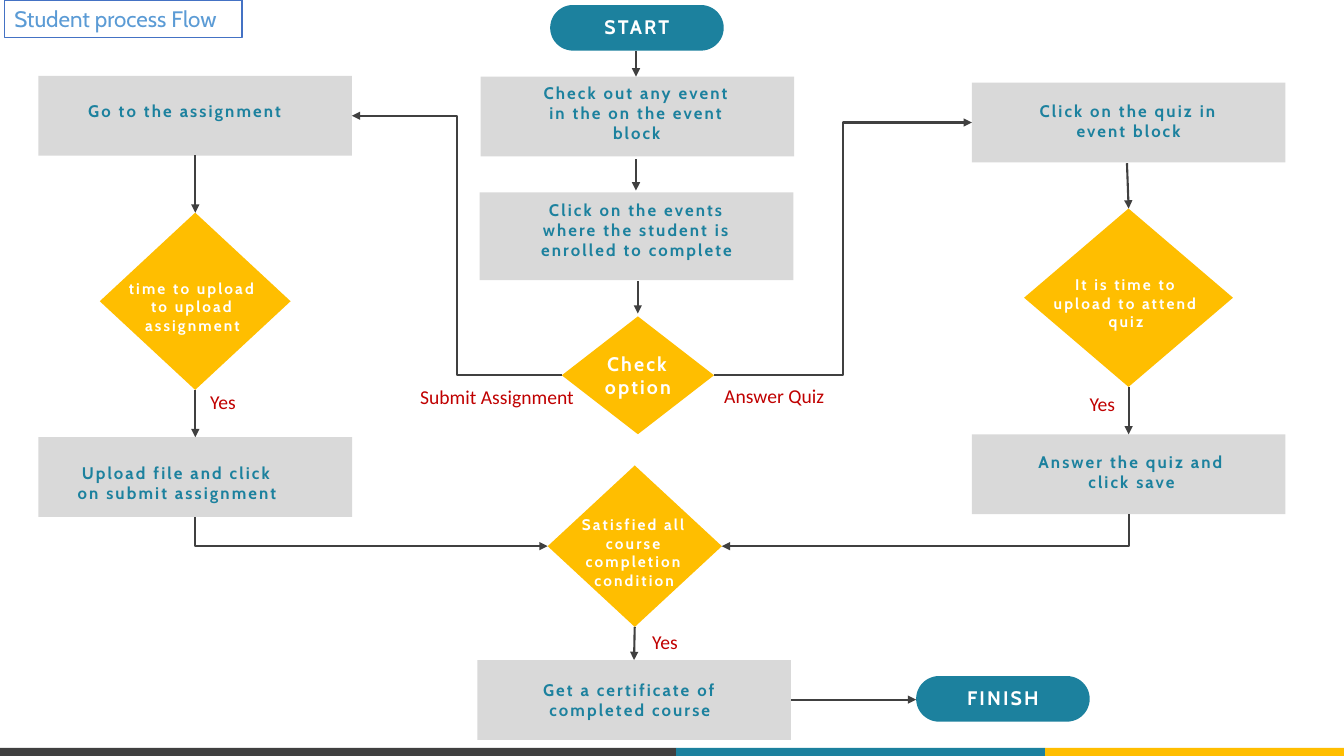
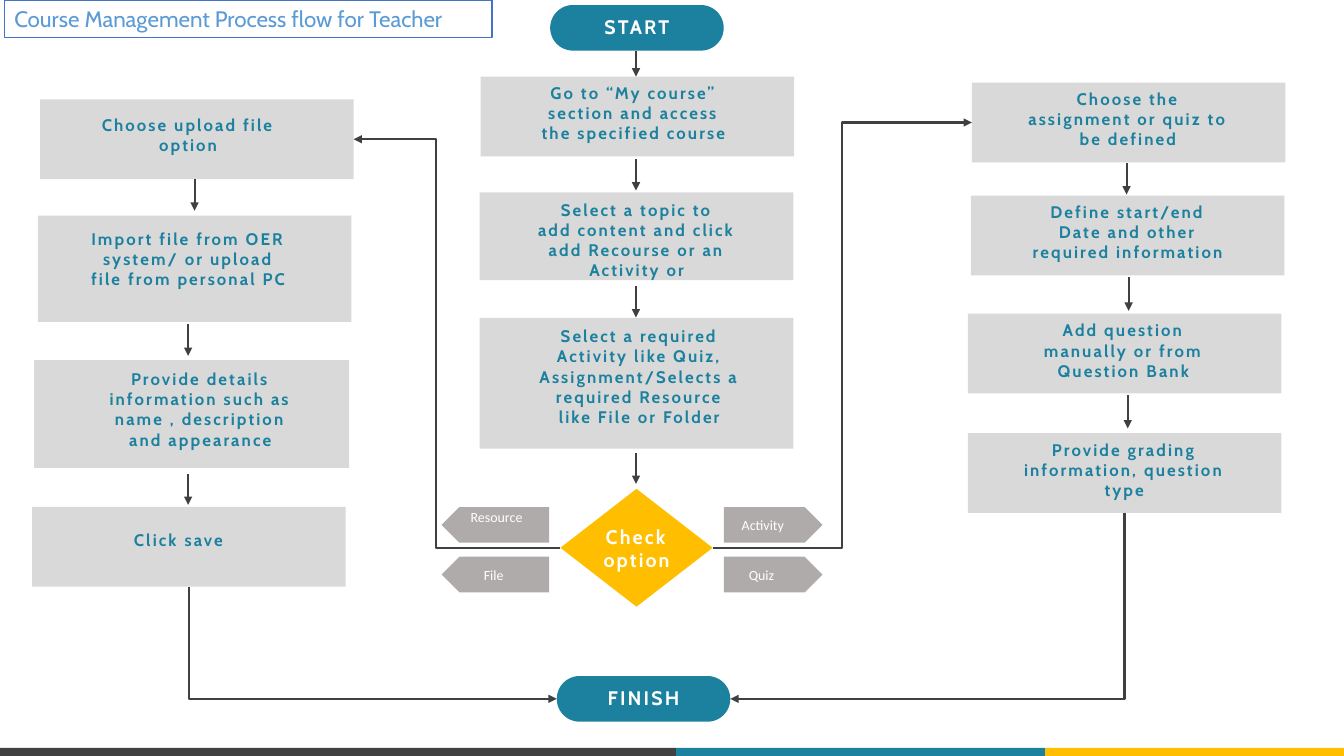
"""Build two flowchart slides: the student process and the teacher's course management."""
from dataclasses import dataclass

from lxml import etree
from pptx import Presentation
from pptx.dml.color import RGBColor
from pptx.enum import shapes, text
from pptx.oxml.ns import qn
from pptx.shapes.autoshape import Shape
from pptx.shapes.connector import Connector
from pptx.slide import Slide
from pptx.util import Pt

TEAL, AMBER, DARK, PALE, GREY = "1C819E", "FFBE00", "404040", "D9D9D9", "AFABAB"
WHITE, RED, SKY, BLUE = "FFFFFF", "C00000", "5B9BD5", "4472C4"
HEADING, PLAIN = "Cabin", "Calibri"
GEOMETRY = shapes.MSO_SHAPE
TOP, LEFT, BOTTOM, RIGHT = range(4)
NO_INSETS = {"margin_left": 0, "margin_top": 0, "margin_right": 0, "margin_bottom": 0}


@dataclass(frozen=True)
class Style:
    """Look of one kind of flowchart node."""
    outline: int
    fill: str
    ink: str
    size: int


STYLES = {
    "end": Style(GEOMETRY.ROUNDED_RECTANGLE, TEAL, WHITE, 14),
    "step": Style(GEOMETRY.RECTANGLE, PALE, TEAL, 12),
    "choice": Style(GEOMETRY.DIAMOND, AMBER, WHITE, 11),
    "option": Style(GEOMETRY.DIAMOND, AMBER, WHITE, 14),
}


@dataclass(frozen=True)
class Node:
    """Flowchart node with its wording and the place of that wording."""
    key: str
    words: str
    left: float
    top: float
    words_left: float
    words_top: float
    height: float = 57
    width: float = 224
    words_width: float = 145
    style: str = "step"


@dataclass(frozen=True)
class Arrow:
    """Straight arrow between two points."""
    x1: float
    y1: float
    x2: float
    y2: float


@dataclass(frozen=True)
class Link:
    """Elbow arrow between two nodes; a corner has no bend and turns once."""
    source: str
    source_side: int
    target: str
    target_side: int
    bend: float = 0


@dataclass(frozen=True)
class Label:
    """Free red caption beside an arrow."""
    words: str
    left: float
    top: float


@dataclass(frozen=True)
class Tag:
    """Grey pointer naming what an option leads to."""
    words: str
    outline: int
    left: float
    top: float
    width: float
    right_inset: float
    lift: float = 0


@dataclass(frozen=True)
class Flow:
    """Everything on one slide."""
    title: str
    title_width: float
    nodes: list[Node]
    arrows: list[Arrow]
    links: list[Link]
    labels: list[Label]
    tags: list[Tag]


def end_node(key: str, words: str, left: float, top: float) -> Node:
    """Describe a rounded start or finish node."""
    return Node(key, words, left, top, left + 34, top + 7, 32.6, 124, 56, "end")


START = end_node("start", "START", 393, 3.6)
START_ARROW = Arrow(454.3, 36.7, 454.3, 54.7)
SECOND_ARROW = Arrow(454.3, 113.8, 454.3, 136.1)

STUDENT = Flow(
    "Student process Flow", 170,
    [
        START,
        Node("events", "Check out any event in the on the event block", 343.4, 54.7, 382.3, 59),
        Node("enrolled", "Click on the events where the student is enrolled to complete",
             342.7, 137.5, 382.3, 142.6, 62.6),
        Node("option", "Check option", 401.3, 226, 414, 251.3, 84.2, 108.7, 83.5, "option"),
        Node("quiz", "Click on the quiz in event block", 694.2, 59, 733.7, 72),
        Node("assignment", "Go to the assignment", 27.4, 54.2, 59.5, 72),
        Node("upload", "Upload file and click on submit assignment", 27.5, 312.3, 54, 330.5),
        Node("answer", "Answer the quiz and click save", 694.2, 310.3, 735.8, 322.6),
        Node("upload time", "time to upload to upload assignment",
             71.3, 151.9, 85.7, 199.4, 126.6, 136.3, 103.7, "choice"),
        Node("quiz time", "It is time to upload to attend quiz",
             731.5, 149, 747.4, 196.6, 127.4, 149.2, 113.8, "choice"),
        Node("satisfied", "Satisfied all course completion condition",
             391.2, 332.5, 405.5, 368, 115.3, 124.4, 95, "choice"),
        Node("certificate", "Get a certificate of completed course", 341, 471.5, 377.5, 485.3),
        end_node("finish", "FINISH", 654.4, 482.9),
    ],
    [
        START_ARROW, SECOND_ARROW,
        Arrow(805, 116.6, 806.2, 149),
        Arrow(455.6, 201, 455.6, 224),
        Arrow(139.5, 111, 139.5, 152),
        Arrow(139.5, 278.5, 139.5, 312.3),
        Arrow(806.2, 276.5, 806.2, 310.3),
        Arrow(453.4, 447.8, 452.9, 471.5),
        Arrow(565, 499.7, 654.4, 499.7),
    ],
    [
        Link("option", RIGHT, "quiz", LEFT, 0.5),
        Link("option", LEFT, "assignment", RIGHT, 0.5),
        Link("answer", BOTTOM, "satisfied", RIGHT),
        Link("upload", BOTTOM, "satisfied", LEFT),
    ],
    [
        Label("Submit Assignment", 293, 271.4),
        Label("Answer Quiz", 510.2, 270.4),
        Label("Yes", 143, 275),
        Label("Yes", 771.2, 276.5),
        Label("Yes", 458.8, 446.4),
    ],
    [],
)

TEACHER = Flow(
    "Course Management Process flow for Teacher", 348.5,
    [
        START,
        Node("course", "Go to “My course”|section and access|the specified course",
             343.4, 54.7, 380, 59),
        Node("topic", "Select a topic to|add content and click add Recourse or an Activity or",
             342.7, 137.5, 382.3, 142.6, 62.6),
        Node("activity", "Select a required Activity like Quiz, Assignment/Selects a "
             "required Resource like File or Folder", 342.7, 227, 384.2, 232.9, 93.5),
        Node("option", "Check option", 400.3, 349.2, 413, 374.8, 84.2, 108.7, 83.5, "option"),
        Node("define", "Choose the assignment or quiz to be defined", 694.2, 59, 733.2, 63.5),
        Node("dates", "Define start/end Date and other required information",
             693.5, 139.7, 733, 144),
        Node("question", "Add question manually or from Question Bank",
             691.3, 224, 730, 228.6),
        Node("grading", "Provide grading information, question type",
             691.3, 309.4, 730.5, 314),
        Node("choose", "Choose upload file option", 28.6, 71, 61.9, 82),
        Node("import", "Import file from OER system/ or upload file from personal PC",
             27.1, 154, 62, 163.4, 76),
        Node("details", "Provide details information such as name , description and appearance",
             24.4, 257.3, 70.6, 263.5, 76.9, 225),
        Node("save", "Click save", 22.9, 362.1, 55, 378.5),
        end_node("finish", "FINISH", 397.7, 482.9),
    ],
    [
        START_ARROW, SECOND_ARROW,
        Arrow(454.3, 204.5, 454.3, 226.8),
        Arrow(454.3, 323.3, 454.3, 345.6),
        Arrow(804.7, 116.6, 804.7, 139),
        Arrow(806.2, 198, 806.2, 222),
        Arrow(805.6, 282.2, 805.6, 306),
        Arrow(139, 128.2, 139, 150.5),
        Arrow(134.4, 231.1, 134.4, 254.2),
        Arrow(134.4, 338.4, 134.4, 360.7),
    ],
    [
        Link("option", RIGHT, "define", LEFT, 0.5),
        Link("option", LEFT, "choose", RIGHT, 0.6),
        Link("grading", BOTTOM, "finish", RIGHT),
        Link("save", BOTTOM, "finish", LEFT),
    ],
    [],
    [
        Tag("Activity", GEOMETRY.RIGHT_ARROW, 517, 362.2, 70.5, 2),
        Tag("Quiz", GEOMETRY.RIGHT_ARROW, 517, 397.7, 70.5, 4),
        Tag("Resource", GEOMETRY.LEFT_ARROW, 315.4, 362.2, 76.8, 11, 11),
        Tag("File", GEOMETRY.LEFT_ARROW, 315.4, 397.7, 76.8, 15),
    ],
)


def paint(format_part: object, colour: str) -> None:
    """Set a fill to a solid colour, or a font or line to that colour."""
    if hasattr(format_part, "solid"):
        format_part.solid()
        format_part.fore_color.rgb = RGBColor.from_string(colour)
    else:
        format_part.color.rgb = RGBColor.from_string(colour)


def set_all(target: object, values: dict) -> None:
    """Set every named attribute on the target."""
    for name, value in values.items():
        setattr(target, name, value)


def write(holder: Shape, words: str, colour: str, font: dict, frame: dict,
          align: int = text.PP_ALIGN.CENTER, spacing: float = 0) -> None:
    """Write words in a shape, with a line break at each bar."""
    set_all(holder.text_frame, {"word_wrap": True, **frame})
    paragraph = holder.text_frame.paragraphs[0]
    paragraph.alignment = align
    for number, line in enumerate(words.split("|")):
        if number:
            paragraph.add_line_break()
        run = paragraph.add_run()
        run.text = line
        set_all(run.font, font)
        paint(run.font, colour)
        if spacing:
            run.font._element.set("spc", str(round(spacing * 100)))


def draw_shape(slide: Slide, outline: int, box: tuple, fill: str) -> Shape:
    """Draw a flat preset shape without a border."""
    shape = slide.shapes.add_shape(outline, *map(Pt, box))
    shape.shadow.inherit = False
    paint(shape.fill, fill)
    shape.line.fill.background()
    return shape


def draw_node(slide: Slide, node: Node) -> Shape:
    """Draw a node and its wording, and return the node's shape."""
    style = STYLES[node.style]
    shape = draw_shape(slide, style.outline, (node.left, node.top, node.width, node.height),
                       style.fill)
    if node.style == "end":
        shape.adjustments[0] = 0.5
    words_height = node.top + node.height - node.words_top
    wording = slide.shapes.add_textbox(*map(Pt, (node.words_left, node.words_top,
                                                 node.words_width, words_height)))
    write(wording, node.words, style.ink,
          {"name": HEADING, "size": Pt(style.size), "bold": True}, NO_INSETS, spacing=1.5)
    return shape


def finish_line(line: Connector, arrow_end: str) -> None:
    """Give a connector its colour, width and arrowhead, and no shadow."""
    paint(line.line, DARK)
    line.line.width = Pt(1.5)
    properties = line._element.spPr
    etree.SubElement(properties.get_or_add_ln(), qn(arrow_end)).set("type", "triangle")
    etree.SubElement(properties, qn("a:effectLst"))


def draw_link(slide: Slide, link: Link, drawn: dict[str, Shape]) -> None:
    """Glue an elbow arrow to two nodes; corners run back from their target."""
    ends = [(drawn[link.source], link.source_side), (drawn[link.target], link.target_side)]
    if not link.bend:
        ends.reverse()
    elbow = slide.shapes.add_connector(shapes.MSO_CONNECTOR.ELBOW, Pt(0), Pt(0), Pt(0), Pt(0))
    elbow.begin_connect(*ends[0])
    elbow.end_connect(*ends[1])
    geometry = elbow._element.spPr.find(qn("a:prstGeom"))
    if link.bend:
        guides = geometry.find(qn("a:avLst"))
        if guides is None:
            guides = etree.SubElement(geometry, qn("a:avLst"))
        guide = etree.SubElement(guides, qn("a:gd"))
        guide.set("name", "adj1")
        guide.set("fmla", f"val {round(link.bend * 100000)}")
    else:
        geometry.set("prst", "bentConnector2")
    finish_line(elbow, "a:tailEnd" if link.bend else "a:headEnd")


def draw_frame(slide: Slide, flow: Flow) -> None:
    """Draw the boxed title and the coloured band at the foot."""
    title = slide.shapes.title
    set_all(title, {"left": Pt(3), "top": Pt(0), "width": Pt(flow.title_width),
                    "height": Pt(26.7)})
    paint(title.fill, WHITE)
    paint(title.line, BLUE)
    title.line.width = Pt(1)
    write(title, flow.title, SKY, {"name": HEADING, "size": Pt(16), "bold": False},
          {"word_wrap": False, "auto_size": text.MSO_AUTO_SIZE.NONE,
           "vertical_anchor": text.MSO_ANCHOR.MIDDLE}, text.PP_ALIGN.LEFT)
    for left, right, colour in ((0, 483, DARK), (483, 746.5, TEAL), (746.5, 960, AMBER)):
        draw_shape(slide, GEOMETRY.RECTANGLE, (left, 534.2, right - left, 5.8), colour)


def draw_flow(slide: Slide, flow: Flow) -> None:
    """Draw one whole flowchart slide."""
    draw_frame(slide, flow)
    drawn = {node.key: draw_node(slide, node) for node in flow.nodes}
    for arrow in flow.arrows:
        line = slide.shapes.add_connector(shapes.MSO_CONNECTOR.STRAIGHT, Pt(arrow.x1),
                                          Pt(arrow.y1), Pt(arrow.x2), Pt(arrow.y2))
        finish_line(line, "a:tailEnd")
    for link in flow.links:
        draw_link(slide, link, drawn)
    for label in flow.labels:
        caption = slide.shapes.add_textbox(Pt(label.left), Pt(label.top), Pt(129), Pt(26))
        write(caption, label.words, RED, {"name": PLAIN, "size": Pt(14)}, {},
              text.PP_ALIGN.LEFT)
    for tag in flow.tags:
        pointer = draw_shape(slide, tag.outline, (tag.left, tag.top, tag.width, 25.4), GREY)
        pointer.adjustments[0], pointer.adjustments[1] = 1, 0.5
        write(pointer, tag.words, WHITE, {"name": PLAIN, "size": Pt(10)},
              {**NO_INSETS, "margin_right": Pt(tag.right_inset), "margin_bottom": Pt(tag.lift),
               "vertical_anchor": text.MSO_ANCHOR.MIDDLE})


def main() -> None:
    """Build and save the presentation."""
    deck = Presentation()
    set_all(deck, {"slide_width": Pt(960), "slide_height": Pt(540)})
    for flow in (STUDENT, TEACHER):
        draw_flow(deck.slides.add_slide(deck.slide_layouts[5]), flow)
    deck.save("out.pptx")


if __name__ == "__main__":
    main()
